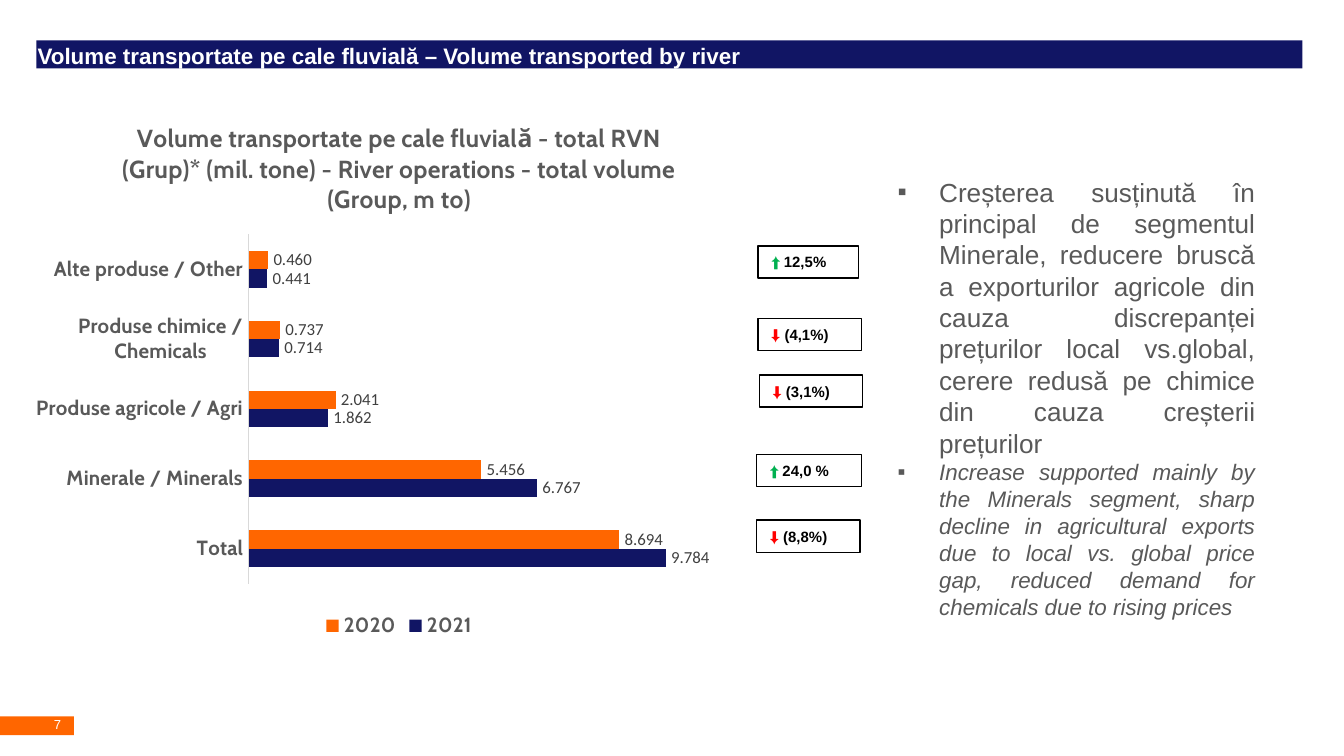
import pptx
import pptx.util
import pptx.dml.color
import pptx.enum.text
import pptx.enum.shapes
import pptx.enum.chart
import pptx.chart.data
import pptx.oxml.ns
import lxml.etree

Inches = pptx.util.Inches
Pt = pptx.util.Pt
RGBColor = pptx.dml.color.RGBColor
RECT = pptx.enum.shapes.MSO_SHAPE.RECTANGLE
ALIGN = pptx.enum.text.PP_ALIGN
ANCHOR = pptx.enum.text.MSO_ANCHOR
qn = pptx.oxml.ns.qn

NAVY = RGBColor(0x11, 0x15, 0x64)
ORANGE = RGBColor(0xFF, 0x66, 0x00)
GREEN = RGBColor(0x00, 0xB0, 0x50)
RED = RGBColor(0xFF, 0x00, 0x00)
GREY = RGBColor(0x59, 0x59, 0x59)
DARK = RGBColor(0x40, 0x40, 0x40)
PALE = RGBColor(0xD9, 0xD9, 0xD9)
BLACK = RGBColor(0x00, 0x00, 0x00)
WHITE = RGBColor(0xFF, 0xFF, 0xFF)

GROUPS = ["Total", "Minerale / Minerals", "Produse agricole / Agri",
          "Produse chimice / Chemicals", "Alte produse / Other"]
SERIES = [("2021", (9.784, 6.767, 1.862, 0.714, 0.441), NAVY),
          ("2020", (8.694, 5.456, 2.041, 0.737, 0.46), ORANGE)]
TITLE = ("Volume transportate pe cale fluvială - total RVN (Grup)* (mil. tone)"
         " - River operations - total volume (Group, m to)")
TAGS = [(5.64, 1.83, 0.75, True, "12,5%"),
        (5.64, 2.37, 0.77, False, "(4,1%)"),
        (5.65, 2.79, 0.77, False, "(3,1%)"),
        (5.63, 3.38, 0.78, True, "24,0 %"),
        (5.63, 3.87, 0.77, False, "(8,8%)")]
NOTES = [("Creșterea susținută în principal de segmentul Minerale, reducere "
          "bruscă a exporturilor agricole din cauza discrepanței prețurilor "
          "local vs.global, cerere redusă pe chimice din cauza creșterii "
          "prețurilor", 14, False),
         ("Increase supported mainly by the Minerals segment, sharp decline in "
          "agricultural exports due to local vs. global price gap, reduced "
          "demand for chemicals due to rising prices", 12, True)]


def style(font, size, color, bold=False, name="Arial"):
    font.size = Pt(size)
    font.color.rgb = color
    font.bold = bold
    font.name = name


def add_box(slide, box, fill=None, line=None):
    shape = slide.shapes.add_shape(RECT, *map(Inches, box))
    shape.shadow.inherit = False
    if fill is None:
        shape.fill.background()
    else:
        shape.fill.solid()
        shape.fill.fore_color.rgb = fill
    if line is None:
        shape.line.fill.background()
    else:
        shape.line.color.rgb = line
        shape.line.width = Pt(0.75)
    return shape


def set_pad(frame, left, top):
    frame.margin_left, frame.margin_top = Inches(left), Inches(top)
    frame.margin_right = frame.margin_bottom = 0


def add_header(slide, box):
    frame = add_box(slide, box, NAVY).text_frame
    set_pad(frame, 0.01, 0.01)
    frame.vertical_anchor = ANCHOR.TOP
    para = frame.paragraphs[0]
    para.text = "Volume transportate pe cale fluvială – Volume transported by river"
    para.alignment = ALIGN.LEFT
    style(para.font, 12, WHITE, True)


def add_footer(slide, box):
    left, top, width, height = box
    add_box(slide, box, ORANGE)
    label = slide.shapes.add_textbox(Inches(left + 0.36), Inches(top - 0.01),
                                     Inches(width - 0.36), Inches(height + 0.01))
    frame = label.text_frame
    frame.word_wrap = True
    set_pad(frame, 0.04, 0.01)
    para = frame.paragraphs[0]
    para.text = "7"
    style(para.font, 7, WHITE)


def set_plot(chart, left, top, width, height):
    area = chart.element.find(".//" + qn("c:plotArea"))
    layout = area.find(qn("c:layout"))
    if layout is None:
        layout = lxml.etree.Element(qn("c:layout"))
        area.insert(0, layout)
    manual = lxml.etree.SubElement(layout, qn("c:manualLayout"))
    for tag, value in [("layoutTarget", "inner"), ("xMode", "edge"), ("yMode", "edge"),
                       ("x", left), ("y", top), ("w", width), ("h", height)]:
        lxml.etree.SubElement(manual, qn("c:" + tag)).set("val", str(value))


def add_bars(slide, box):
    kinds = pptx.enum.chart
    data = pptx.chart.data.CategoryChartData(number_format="#,##0.000")
    data.categories = GROUPS
    for name, values, _ in SERIES:
        data.add_series(name, values)
    chart = slide.shapes.add_chart(kinds.XL_CHART_TYPE.BAR_CLUSTERED,
                                   *map(Inches, box), data).chart
    style(chart.font, 10, BLACK, name="Calibri")
    chart.has_title = True
    para = chart.chart_title.text_frame.paragraphs[0]
    para.text = TITLE
    style(para.font, 13.2, GREY, True, "Cabin")
    chart.chart_title.include_in_layout = False
    chart.has_legend = True
    chart.legend.position = kinds.XL_LEGEND_POSITION.BOTTOM
    chart.legend.include_in_layout = False
    style(chart.legend.font, 11, GREY, True, "Cabin")

    axis = chart.category_axis
    axis.major_tick_mark = kinds.XL_TICK_MARK.NONE
    axis.format.line.color.rgb = PALE
    axis.format.line.width = Pt(0.75)
    style(axis.tick_labels.font, 11, GREY, True, "Cabin")
    scale = chart.value_axis
    scale.visible = False
    scale.has_major_gridlines = False
    scale.minimum_scale, scale.maximum_scale = 0, 12

    plot = chart.plots[0]
    plot.gap_width = 182
    plot.overlap = 0
    plot.vary_by_categories = False
    for series, (_, _, color) in zip(plot.series, SERIES):
        series.format.fill.solid()
        series.format.fill.fore_color.rgb = color
        labels = series.data_labels
        labels.show_value = True
        labels.position = kinds.XL_LABEL_POSITION.OUTSIDE_END
        labels.number_format = "#,##0.000"
        labels.number_format_is_linked = False
        style(labels.font, 9, DARK, name="Calibri")
    set_plot(chart, 0.3, 0.25, 0.68, 0.64)


def add_tag(slide, box, rise, text):
    frame = add_box(slide, box, line=BLACK).text_frame
    frame.vertical_anchor = ANCHOR.MIDDLE
    para = frame.paragraphs[0]
    para.alignment = ALIGN.LEFT
    arrow, value = para.add_run(), para.add_run()
    arrow.text = "⬆ " if rise else "⬇ "
    value.text = text
    style(arrow.font, 8, GREEN if rise else RED, True, "Calibri" if rise else "Arial")
    style(value.font, 8, BLACK, True)


def add_notes(slide, box):
    frame = slide.shapes.add_textbox(*map(Inches, box)).text_frame
    frame.word_wrap = True
    for index, (text, size, italic) in enumerate(NOTES):
        para = frame.add_paragraph() if index else frame.paragraphs[0]
        para.text = text
        para.alignment = ALIGN.JUSTIFY
        style(para.font, size, GREY)
        para.font.italic = italic
        props = para._p.get_or_add_pPr()
        props.set("marL", str(Inches(0.31)))
        props.set("indent", str(-Inches(0.31)))
        props.insert(0, lxml.etree.Element(qn("a:buFont"), typeface="Arial"))
        props.insert(1, lxml.etree.Element(qn("a:buChar"), char="▪"))


def main():
    deck = pptx.Presentation()
    deck.slide_width, deck.slide_height = Inches(10), Inches(5.625)
    slide = deck.slides.add_slide(deck.slide_layouts[6])
    add_footer(slide, (0, 5.33, 0.55, 0.14))
    add_header(slide, (0.27, 0.3, 9.42, 0.21))
    add_bars(slide, (0.17, 0.73, 5.6, 4.06))
    for left, top, width, rise, text in TAGS:
        add_tag(slide, (left, top, width, 0.24), rise, text)
    add_notes(slide, (6.58, 1.26, 2.86, 3.43))
    deck.save("out.pptx")


if __name__ == "__main__":
    main()
